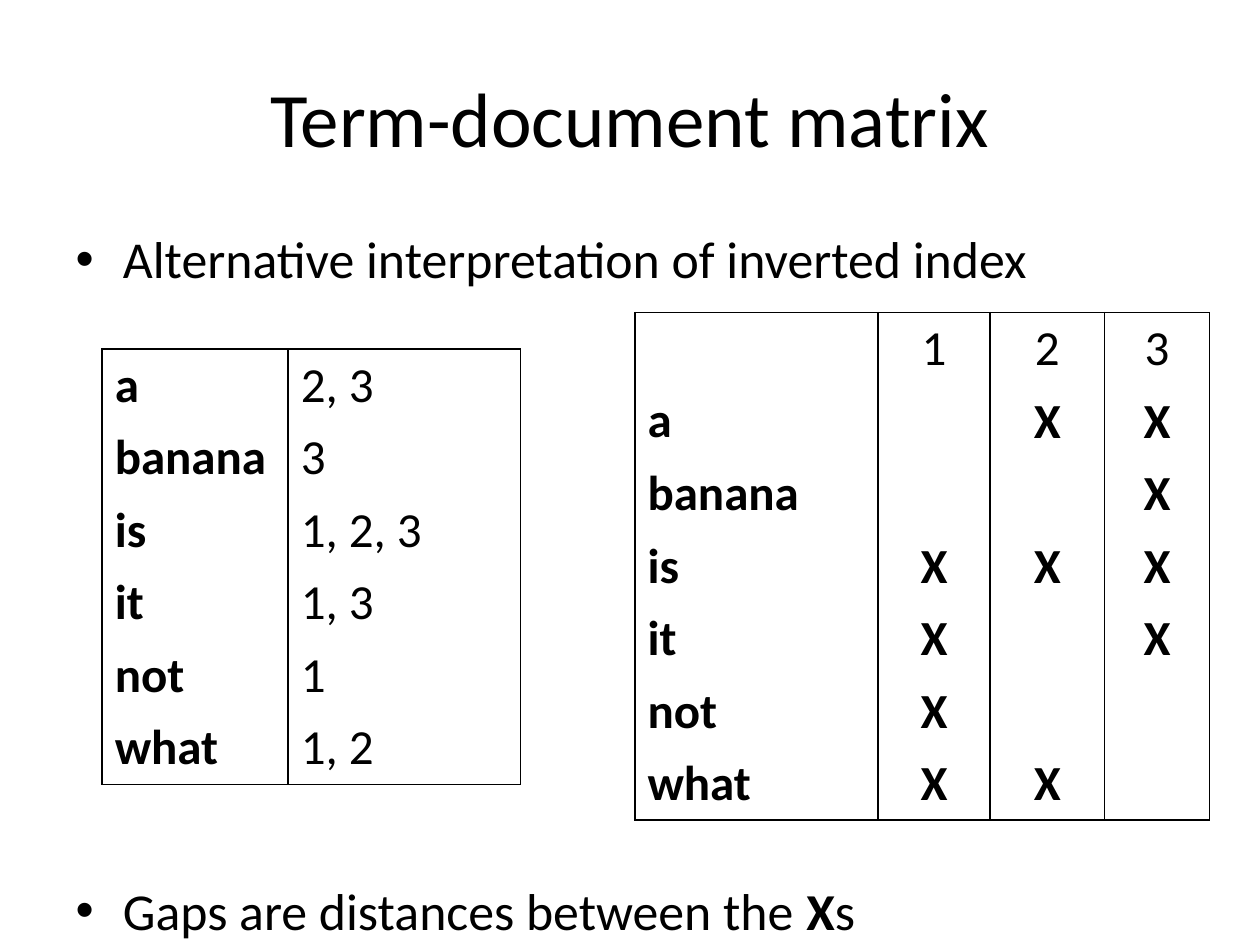
import pptx
import pptx.dml.color
import pptx.enum.text
import pptx.oxml
import pptx.oxml.ns
import pptx.util
from pptx.util import Cm, Pt

BLACK = pptx.dml.color.RGBColor(0, 0, 0)
POSTINGS = {
    "a": [2, 3],
    "banana": [3],
    "is": [1, 2, 3],
    "it": [1, 3],
    "not": [1],
    "what": [1, 2],
}
DOCUMENTS = [1, 2, 3]


class SlideBuilder:
    font = "Calibri"
    title_size = Pt(44)
    body_size = Pt(29.6)
    table_size = Pt(28)
    row_height = Cm(1.46)

    def __init__(self, page):
        self.page = page

    def format_span(self, span, size, bold=False):
        span.font.name = self.font
        span.font.size = size
        span.font.bold = bold
        span.font.color.rgb = BLACK

    def place(self, box, left, top, width, height):
        box.left, box.top, box.width, box.height = map(Cm, (left, top, width, height))
        box.text_frame.auto_size = pptx.enum.text.MSO_AUTO_SIZE.NONE

    def title(self, text, *area):
        box = self.page.shapes.title
        self.place(box, *area)
        box.text_frame.text = text
        self.format_span(box.text_frame.paragraphs[0].runs[0], self.title_size)

    def bullets(self, items, gap, *area):
        """Write bullets, each a list of (text, bold), with a gap between them."""
        box = self.page.placeholders[1]
        self.place(box, *area)
        frame = box.text_frame
        for index, item in enumerate(items):
            para = frame.add_paragraph() if index else frame.paragraphs[0]
            para.space_before = gap if index else Pt(0)
            for text, bold in item:
                span = para.add_run()
                span.text = text
                self.format_span(span, self.body_size, bold)

    def set_borders(self, cell, visible_sides):
        properties = cell._tc.get_or_add_tcPr()
        namespace = pptx.oxml.ns.nsdecls("a")
        for index, side in enumerate("LRTB"):
            paint = "<a:noFill/>"
            if side in visible_sides:
                paint = f'<a:solidFill><a:srgbClr val="{BLACK}"/></a:solidFill>'
            line = pptx.oxml.parse_xml(
                f'<a:ln{side} {namespace} w="12700">{paint}</a:ln{side}>')
            properties.insert(index, line)

    def table(self, rows, widths, left, top, is_bold, is_centred):
        """Draw a table ruled between its columns and around its outside."""
        frame = self.page.shapes.add_table(
            len(rows), len(widths), Cm(left), Cm(top),
            Cm(sum(widths)), self.row_height * len(rows))
        table = frame.table
        table.first_row = table.horz_banding = False
        for column, width in zip(table.columns, widths):
            column.width = Cm(width)
        for row_index, row in enumerate(rows):
            table.rows[row_index].height = self.row_height
            for column_index, text in enumerate(row):
                cell = table.cell(row_index, column_index)
                cell.fill.background()
                sides = "LR"
                if row_index == 0:
                    sides += "T"
                if row_index == len(rows) - 1:
                    sides += "B"
                self.set_borders(cell, sides)
                cell.text_frame.text = text
                para = cell.text_frame.paragraphs[0]
                if is_centred(column_index):
                    para.alignment = pptx.enum.text.PP_ALIGN.CENTER
                    cell.vertical_anchor = pptx.enum.text.MSO_ANCHOR.MIDDLE
                for span in para.runs:
                    self.format_span(span, self.table_size,
                                     is_bold(row_index, column_index))


def main():
    deck = pptx.Presentation()
    deck.slide_width, deck.slide_height = Cm(25.4), Cm(19.05)
    builder = SlideBuilder(deck.slides.add_slide(deck.slide_layouts[1]))

    builder.title("Term-document matrix", 1.27, 0.76, 22.86, 3.18)
    builder.bullets(
        [[("Alternative interpretation of inverted index", False)],
         [("Gaps are distances between the ", False), ("X", True), ("s", False)]],
        Pt(337), 1.27, 4.45, 22.86, 14.6)

    index_rows = [[term, ", ".join(map(str, found))]
                  for term, found in POSTINGS.items()]
    builder.table(index_rows, [3.75, 4.68], 2.06, 7.04,
                  is_bold=lambda row, column: column == 0,
                  is_centred=lambda column: False)

    matrix_rows = [["", *map(str, DOCUMENTS)]]
    for term, found in POSTINGS.items():
        matrix_rows.append(
            [term] + ["X" if number in found else "" for number in DOCUMENTS])
    builder.table(matrix_rows, [4.9, 2.26, 2.31, 2.11], 12.8, 6.3,
                  is_bold=lambda row, column: row > 0,
                  is_centred=lambda column: column > 0)

    deck.save("out.pptx")


if __name__ == "__main__":
    main()
